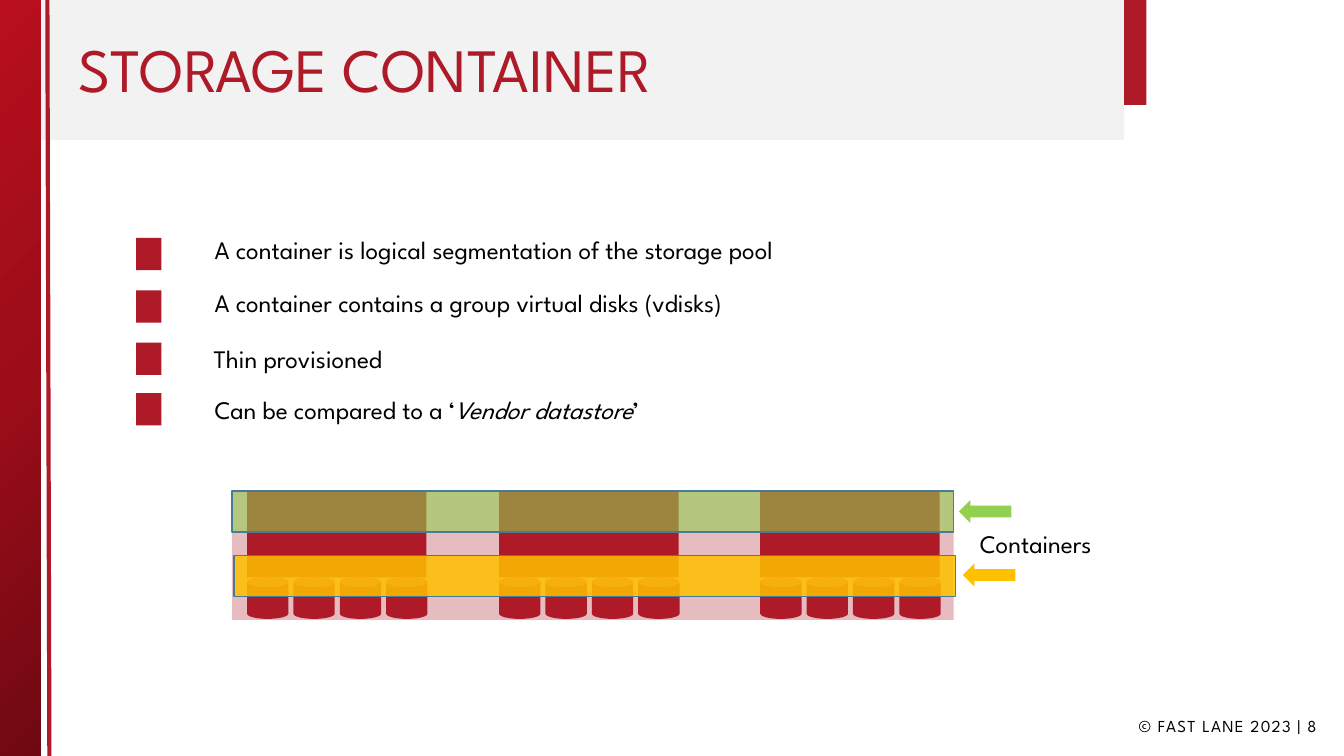
from typing import NamedTuple, Optional

from lxml import etree
from pptx import Presentation
from pptx import util as u
from pptx.dml.color import RGBColor
from pptx.enum import shapes, text
from pptx.oxml import parse_xml
from pptx.oxml.ns import nsdecls, qn

PX = 9144  # 100 px to the inch
FONT = "League Spartan"
RED, GREEN, AMBER, BLACK = "AE1A27", "92D050", "FFC000", "000000"
GREY, STEEL = "F2F2F2", "477C97"
RECT, CAN, ARROW = (shapes.MSO_SHAPE.RECTANGLE, shapes.MSO_SHAPE.CAN,
                    shapes.MSO_SHAPE.LEFT_ARROW)
NODE_LEFTS = (245, 495, 754)
DISKS_PER_NODE, DISK_PITCH = 4, 46


class Box(NamedTuple):
    left: int
    top: int
    width: int
    height: int

    def emu(self) -> list[int]:
        return [length * PX for length in self]


class Block(NamedTuple):
    box: Box
    fill: str
    kind: shapes.MSO_SHAPE = RECT
    opacity: int = 100
    line: Optional[str] = None


class Bullet(NamedTuple):
    marker_top: int
    text_box: Box
    runs: tuple[tuple[str, bool], ...]


class Label(NamedTuple):
    box: Box
    runs: tuple[tuple[str, bool], ...]
    size: int = 18
    wrap: bool = False
    align: text.PP_ALIGN = text.PP_ALIGN.LEFT
    anchor: text.MSO_ANCHOR = text.MSO_ANCHOR.TOP
    auto_size: text.MSO_AUTO_SIZE = text.MSO_AUTO_SIZE.SHAPE_TO_FIT_TEXT
    spacing: int = 0


BACKDROP = (
    Block(Box(0, 0, 1115, 139), GREY),
    Block(Box(1115, 0, 22, 104), RED),
)
BULLETS = (
    Bullet(236, Box(203, 228, 689, 40),
           (("A container is logical segmentation of the storage pool", False),)),
    Bullet(288, Box(203, 280, 624, 40),
           (("A container contains a group virtual disks (vdisks)", False),)),
    Bullet(340, Box(202, 336, 215, 40), (("Thin provisioned", False),)),
    Bullet(390, Box(203, 386, 564, 40),
           (("Can be compared to a ‘", False), ("Vendor datastore", True), ("’", False))),
)
STORAGE_POOL = Block(Box(230, 487, 716, 128), RED, opacity=29)
CONTAINERS = (
    Block(Box(230, 487, 716, 41), GREEN, opacity=59, line=STEEL),
    Block(Box(232, 551, 716, 41), AMBER, opacity=85, line=STEEL),
)
ARROWS = (
    Block(Box(951, 496, 52, 23), GREEN, ARROW),
    Block(Box(955, 559, 52, 23), AMBER, ARROW),
)
CONTAINERS_LABEL = Label(Box(962, 519, 303, 40), (("Containers", False),), wrap=True)
FOOTER = Label(Box(1084, 703, 232, 34), (("© FAST LANE 2023 | 8", False),), size=12,
               wrap=True, align=text.PP_ALIGN.RIGHT, anchor=text.MSO_ANCHOR.MIDDLE,
               auto_size=text.MSO_AUTO_SIZE.NONE, spacing=90)


def color(value: str) -> RGBColor:
    return RGBColor.from_string(value)


def apply(target: object, values: dict) -> None:
    for name, value in values.items():
        setattr(target, name, value)


def draw_block(slide, block: Block):
    shape = slide.shapes.add_shape(block.kind, *block.box.emu())
    shape.shadow.inherit = False
    shape.fill.solid()
    shape.fill.fore_color.rgb = color(block.fill)
    if block.opacity < 100:
        rgb = shape.element.spPr.find(qn("a:solidFill"))[0]
        etree.SubElement(rgb, qn("a:alpha")).set("val", str(block.opacity * 1000))
    if block.line:
        shape.line.color.rgb = color(block.line)
        shape.line.width = u.Pt(1)
    else:
        shape.line.fill.background()
    return shape


def draw_label(slide, label: Label) -> None:
    frame = slide.shapes.add_textbox(*label.box.emu()).text_frame
    apply(frame, {"word_wrap": label.wrap, "auto_size": label.auto_size,
                  "vertical_anchor": label.anchor})
    paragraph = frame.paragraphs[0]
    paragraph.alignment = label.align
    for words, italic in label.runs:
        run = paragraph.add_run()
        run.text = words
        apply(run.font, {"name": FONT, "size": u.Pt(label.size), "italic": italic})
        run.font.color.rgb = color(BLACK)
        if label.spacing:
            run.font._element.set("spc", str(label.spacing))


def draw_side_band(slide) -> None:
    """Draw the rotated band whose gradient darkens towards the bottom left."""
    band = draw_block(slide, Block(Box(-359, 351, 750, 49), RED))
    band.rotation = 90
    stops = "".join(
        f'<a:gs pos="{place * 1000}"><a:srgbClr val="{shade}"/></a:gs>'
        for place, shade in ((0, "6E0912"), (50, "9C0D19"), (100, "B90F1E")))
    gradient = parse_xml(
        f'<a:gradFill {nsdecls("a")} rotWithShape="1"><a:gsLst>{stops}</a:gsLst>'
        '<a:path path="circle"><a:fillToRect l="100000" t="100000"/></a:path></a:gradFill>')
    properties = band.element.spPr
    properties.replace(properties.find(qn("a:solidFill")), gradient)


def draw_side_line(slide) -> None:
    line = slide.shapes.add_connector(
        shapes.MSO_CONNECTOR.STRAIGHT, *Box(49, 750, 47, 0).emu())
    line.line.color.rgb = color(RED)
    line.line.width = u.Pt(3)
    etree.SubElement(line.element.spPr, qn("a:effectLst"))


def format_title(slide) -> None:
    title = slide.shapes.title
    apply(title, dict(zip(("left", "top", "width", "height"), Box(68, 40, 999, 64).emu())))
    frame = title.text_frame
    frame.text = "STORAGE CONTAINER"
    apply(frame, {"word_wrap": True, "auto_size": text.MSO_AUTO_SIZE.NONE,
                  "vertical_anchor": text.MSO_ANCHOR.MIDDLE})
    paragraph = frame.paragraphs[0]
    apply(paragraph, {"alignment": text.PP_ALIGN.LEFT, "line_spacing": 0.9})
    font = paragraph.runs[0].font
    apply(font, {"name": FONT, "size": u.Pt(44)})
    font.color.rgb = color(RED)
    title.element.getparent().append(title.element)  # in front of the backdrop


def draw_storage(slide) -> None:
    for left in NODE_LEFTS:
        draw_block(slide, Block(Box(left, 487, 178, 86), RED))
        for disk in range(DISKS_PER_NODE):
            draw_block(slide, Block(Box(left + disk * DISK_PITCH, 572, 41, 42), RED, CAN))
    for block in (STORAGE_POOL, *CONTAINERS, *ARROWS):
        draw_block(slide, block)
    draw_label(slide, CONTAINERS_LABEL)


def main() -> None:
    presentation = Presentation()
    apply(presentation, {"slide_width": 1333 * PX, "slide_height": 750 * PX})
    slide = presentation.slides.add_slide(presentation.slide_layouts[5])
    draw_label(slide, FOOTER)
    for block in BACKDROP:
        draw_block(slide, block)
    draw_side_line(slide)
    draw_side_band(slide)
    format_title(slide)
    for bullet in BULLETS:
        draw_block(slide, Block(Box(135, bullet.marker_top, 25, 32), RED))
        draw_label(slide, Label(bullet.text_box, bullet.runs))
    draw_storage(slide)
    presentation.save("out.pptx")


if __name__ == "__main__":
    main()
